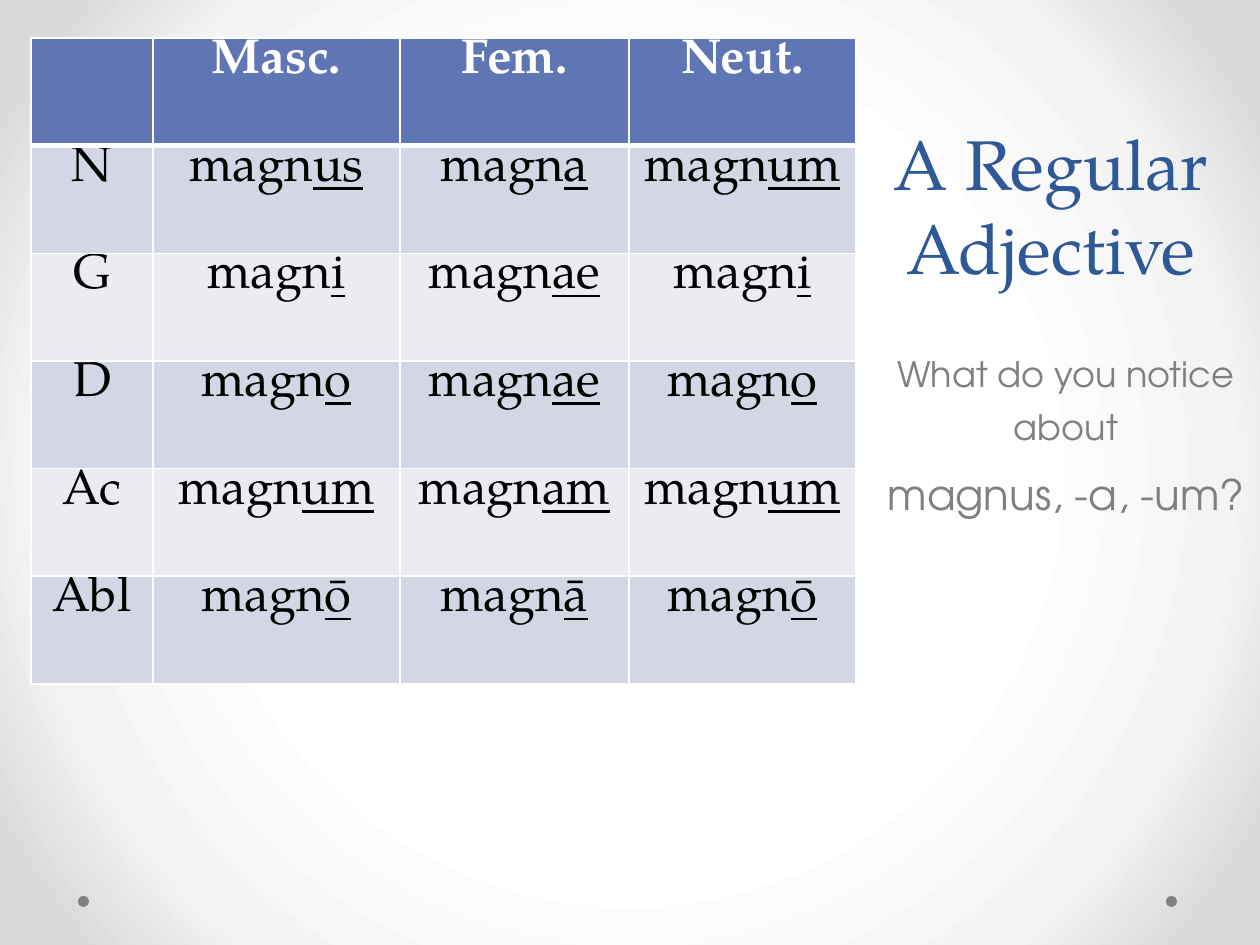
from dataclasses import dataclass

from lxml.etree import SubElement
from pptx import Presentation
from pptx.dml.color import RGBColor
from pptx.enum.shapes import MSO_SHAPE
from pptx.enum.text import MSO_ANCHOR, PP_ALIGN
from pptx.oxml import parse_xml
from pptx.oxml.ns import nsdecls, qn
from pptx.util import Emu, Pt

PX_PER_INCH = 126


@dataclass(frozen=True)
class Theme:
    serif: str = "TeX Gyre Pagella"
    sans: str = "TeX Gyre Adventor"
    title: str = "2F5897"
    grey: str = "808080"
    white: str = "FFFFFF"
    black: str = "000000"
    header: str = "6076B4"
    bands: tuple = ("D2D6E5", "EAECF2")
    glow: tuple = ((50, "FFFFFF"), (76, "F4F4F4"), (92, "DADADA"))
    title_size: int = 40
    table_size: int = 28
    question_size: int = 20
    example_size: int = 24


THEME = Theme()
STEM = "magn"
GENDERS = ("", "Masc.", "Fem.", "Neut.")
ENDINGS = (
    ("N", "us", "a", "um"),
    ("G", "i", "ae", "i"),
    ("D", "o", "ae", "o"),
    ("Ac", "um", "am", "um"),
    ("Abl", "ō", "ā", "ō"),
)
COLUMN_WIDTHS = (122, 247, 229, 227)


def px(n):
    return Emu(round(n * 914400 / PX_PER_INCH))


def box(*lengths):
    return [px(n) for n in lengths]


def format_paragraph(p, font, size, color, bold=False):
    p.alignment = PP_ALIGN.CENTER
    p.font.name = font
    p.font.size = Pt(size)
    p.font.bold = bold
    p.font.color.rgb = RGBColor.from_string(color)


def set_background(s):
    """Fill the slide with a round gradient, lightest in the middle."""
    s.background.fill.solid()
    stops = "".join(
        f'<a:gs pos="{pos * 1000}"><a:srgbClr val="{color}"/></a:gs>'
        for pos, color in THEME.glow)
    gradient = parse_xml(
        f'<a:gradFill {nsdecls("a")} rotWithShape="1"><a:gsLst>{stops}</a:gsLst>'
        '<a:path path="circle">'
        '<a:fillToRect l="50000" t="50000" r="50000" b="50000"/></a:path>'
        '</a:gradFill>')
    solid = next(s.element.iter(qn("a:solidFill")))
    solid.getparent().replace(solid, gradient)


def add_dot(s, left, top, size):
    sp = s.shapes.add_shape(MSO_SHAPE.OVAL, *box(left, top, size, size))
    sp.shadow.inherit = False
    sp.fill.solid()
    sp.fill.fore_color.rgb = RGBColor.from_string(THEME.grey)
    sp.line.fill.background()


def set_title(s, text):
    sp = s.shapes.title
    sp.left, sp.top, sp.width, sp.height = box(844, 6, 414, 289)
    tf = sp.text_frame
    tf.text = text
    tf.word_wrap = True
    tf.vertical_anchor = MSO_ANCHOR.BOTTOM
    format_paragraph(tf.paragraphs[0], THEME.serif, THEME.title_size, THEME.title)


def set_borders(cell, widths):
    tcPr = cell._tc.get_or_add_tcPr()
    for side, width in widths.items():
        ln = SubElement(tcPr, qn(f"a:ln{side}"), w=str(Pt(width)))
        fill = SubElement(ln, qn("a:solidFill"))
        SubElement(fill, qn("a:srgbClr"), val=THEME.white)


def format_cell(cell, fill, color, borders, bold=False):
    set_borders(cell, borders)
    cell.fill.solid()
    cell.fill.fore_color.rgb = RGBColor.from_string(fill)
    cell.margin_top = cell.margin_bottom = 0
    format_paragraph(cell.text_frame.paragraphs[0], THEME.serif,
                     THEME.table_size, color, bold)


def add_declension_table(s):
    table = s.shapes.add_table(len(ENDINGS) + 1, len(GENDERS),
                               *box(31, 38, sum(COLUMN_WIDTHS), 646)).table
    for column, width in zip(table.columns, COLUMN_WIDTHS):
        column.width = px(width)

    for c, gender in enumerate(GENDERS):
        cell = table.cell(0, c)
        cell.text = gender
        format_cell(cell, THEME.header, THEME.white,
                    {"L": 1, "R": 1, "T": 1, "B": 3}, bold=True)

    for r, (case, *endings) in enumerate(ENDINGS, 1):
        table.cell(r, 0).text = case
        for c, ending in enumerate(endings, 1):
            p = table.cell(r, c).text_frame.paragraphs[0]
            p.add_run().text = STEM
            run = p.add_run()
            run.text = ending
            run.font.underline = True
        borders = {"L": 1, "R": 1, "T": 3 if r == 1 else 1, "B": 1}
        for cell in table.rows[r].cells:
            format_cell(cell, THEME.bands[(r - 1) % 2], THEME.black, borders)


def add_question(s, lines):
    tf = s.shapes.add_textbox(*box(859, 336, 414, 508)).text_frame
    tf.word_wrap = True
    for i, (text, size) in enumerate(lines):
        p = tf.add_paragraph() if i else tf.paragraphs[0]
        p.text = text
        p.line_spacing = 1.25
        p.space_before = Pt(size * 0.2)
        format_paragraph(p, THEME.sans, size, THEME.grey)


def main():
    prs = Presentation()
    prs.slide_width, prs.slide_height = box(1260, 945)
    s = prs.slides.add_slide(prs.slide_layouts[5])
    set_background(s)
    for left in (1166, 78):
        add_dot(s, left, 896, 11)
    set_title(s, "A Regular Adjective")
    add_declension_table(s)
    add_question(s, (("What do you notice about", THEME.question_size),
                     ("magnus, -a, -um?", THEME.example_size)))
    prs.save("out.pptx")


if __name__ == "__main__":
    main()
